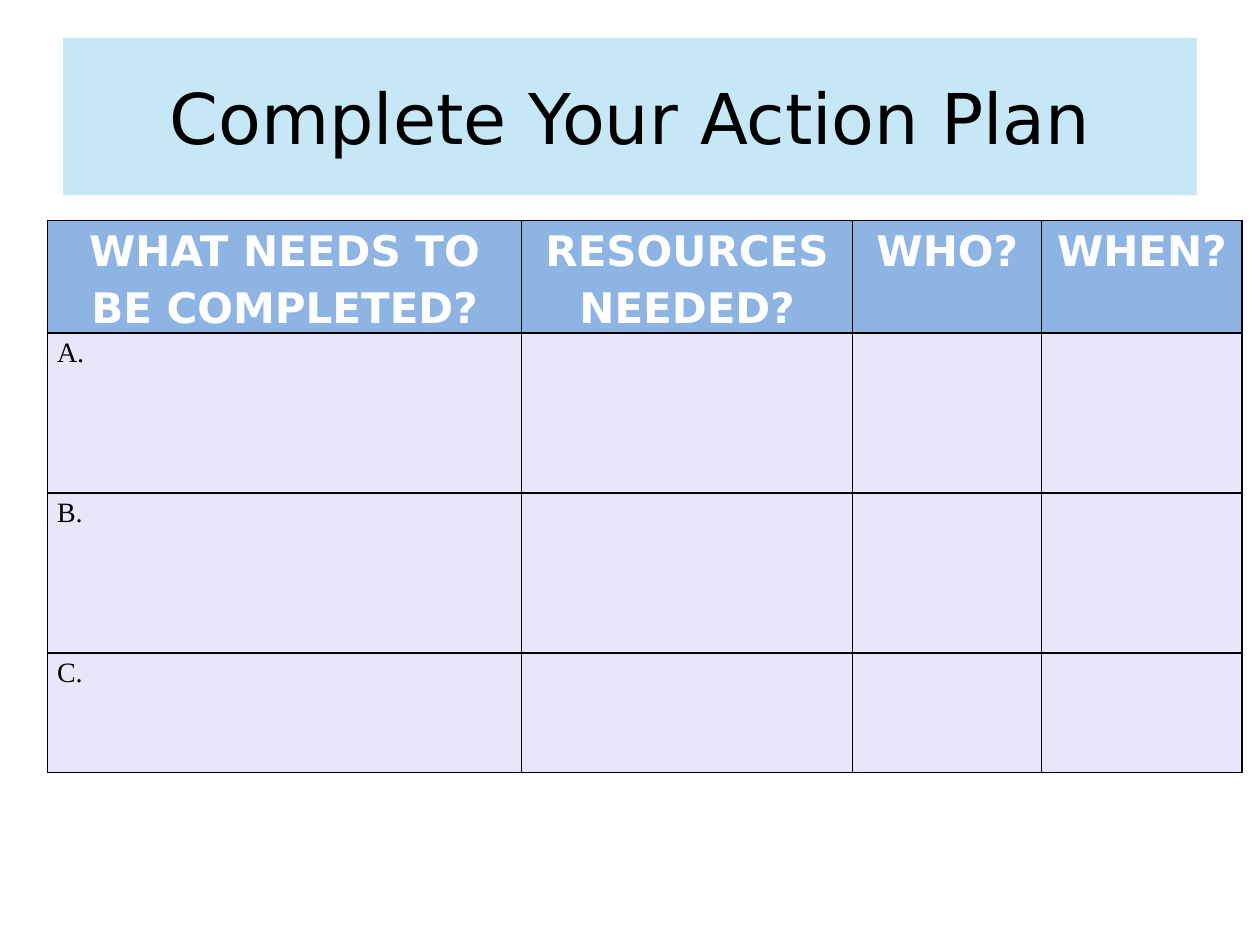
from lxml.etree import SubElement
from pptx import Presentation
from pptx.dml.color import RGBColor
from pptx.enum.text import MSO_ANCHOR as Anchor, PP_ALIGN as Align
from pptx.oxml import parse_xml
from pptx.oxml.ns import nsdecls, qn
from pptx.util import Pt

BLACK = RGBColor(0x00, 0x00, 0x00)
WHITE = RGBColor(0xFF, 0xFF, 0xFF)
SKY = RGBColor(0xA9, 0xDC, 0xF2)
BLUE = RGBColor(0x8E, 0xB4, 0xE3)
LAVENDER = RGBColor(0xE7, 0xE7, 0xF9)

HEADINGS = ["WHAT NEEDS TO BE COMPLETED?", "RESOURCES NEEDED?", "WHO?", "WHEN?"]
ACTIONS = ["A.", "B.", "C."]
COLUMN_WIDTHS = [270.7, 189.4, 108, 114.5]
ROW_HEIGHTS = [64, 91.4, 91.4, 68.4]


def write_text(frame, text, font, size, color=BLACK, bold=False,
               align=Align.LEFT, spacing=1.0):
    para = frame.paragraphs[0]
    para.alignment = align
    para.line_spacing = spacing
    span = para.add_run()
    span.text = text
    span.font.name = font
    span.font.size = Pt(size)
    span.font.bold = bold
    span.font.color.rgb = color


def add_borders(cell, color=BLACK, width=1):
    # Border lines come before the fill in the cell properties
    properties = cell._tc.get_or_add_tcPr()
    for index, side in enumerate(("lnL", "lnR", "lnT", "lnB")):
        properties.insert(index, parse_xml(
            f'<a:{side} {nsdecls("a")} w="{Pt(width)}"><a:solidFill>'
            f'<a:srgbClr val="{color}"/></a:solidFill></a:{side}>'))


def place_title(page, left, top, width, height):
    title = page.shapes.title
    title.left, title.top = Pt(left), Pt(top)
    title.width, title.height = Pt(width), Pt(height)

    # Translucent band
    title.fill.solid()
    title.fill.fore_color.rgb = SKY
    color = title._element.spPr.find(qn("a:solidFill")).find(qn("a:srgbClr"))
    SubElement(color, qn("a:alpha")).set("val", "67000")

    title.text_frame.vertical_anchor = Anchor.MIDDLE
    write_text(title.text_frame, "Complete Your Action Plan", "DejaVu Sans", 40,
               align=Align.CENTER)


def place_plan_table(page, left, top, width, height):
    table = page.shapes.add_table(len(ROW_HEIGHTS), len(COLUMN_WIDTHS), Pt(left),
                                  Pt(top), Pt(width), Pt(height)).table
    # Share the box out in proportion
    for column, share in zip(table.columns, COLUMN_WIDTHS):
        column.width = Pt(width * share / sum(COLUMN_WIDTHS))
    for row, share in zip(table.rows, ROW_HEIGHTS):
        row.height = Pt(height * share / sum(ROW_HEIGHTS))

    # Cell format
    for index, row in enumerate(table.rows):
        for cell in row.cells:
            cell.fill.solid()
            cell.fill.fore_color.rgb = LAVENDER if index else BLUE
            cell.margin_left = cell.margin_right = Pt(5.4)
            cell.margin_top = cell.margin_bottom = 0
            add_borders(cell)

    # Headings and action letters
    for index, heading in enumerate(HEADINGS):
        write_text(table.cell(0, index).text_frame, heading, "DejaVu Sans", 24,
                   color=WHITE, bold=True, align=Align.CENTER, spacing=1.15)
    for index, action in enumerate(ACTIONS, start=1):
        write_text(table.cell(index, 0).text_frame, action, "Times New Roman", 16,
                   spacing=1.15)


def main():
    deck = Presentation()
    deck.slide_width, deck.slide_height = Pt(720), Pt(540)
    page = deck.slides.add_slide(deck.slide_layouts[5])
    place_title(page, 36, 21.6, 648, 90)
    place_plan_table(page, 27.2, 126, 682.6, 315.2)
    deck.save("out.pptx")


if __name__ == "__main__":
    main()
